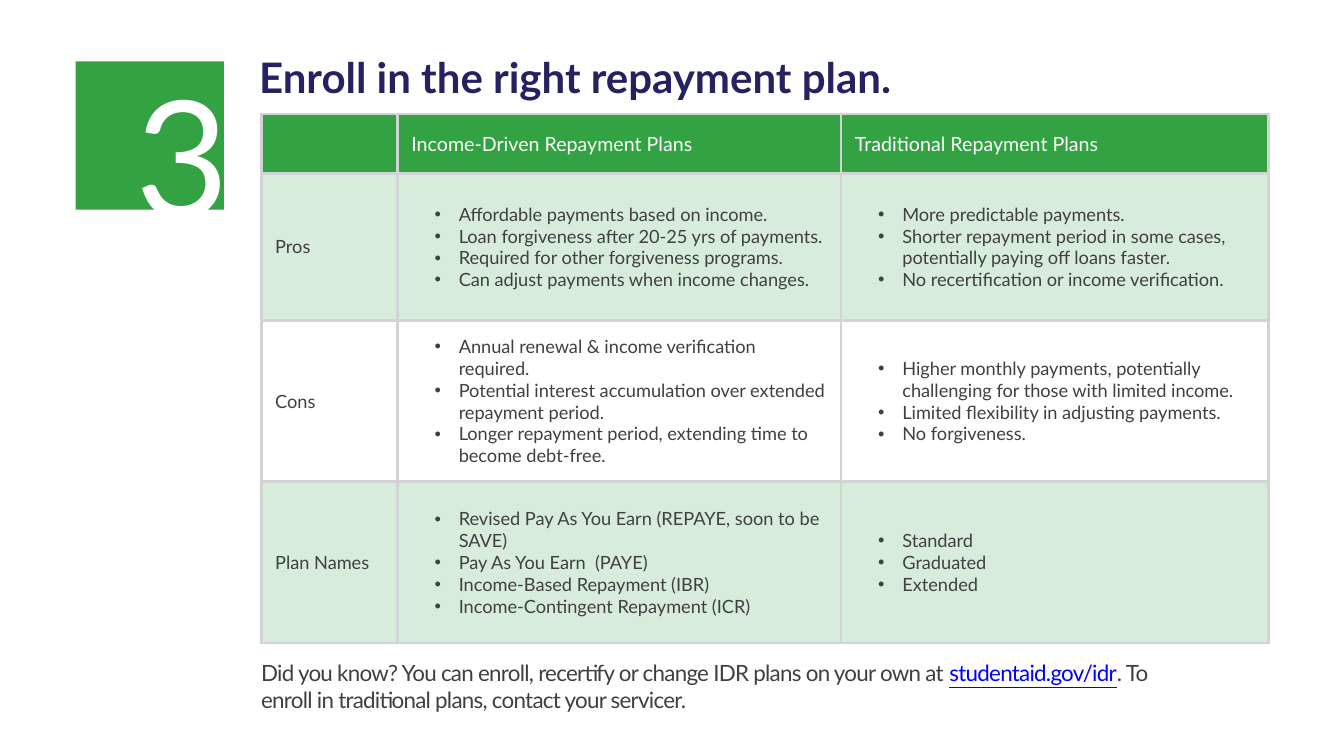
from typing import NamedTuple

from lxml import etree
from pptx import Presentation
from pptx import util as u
from pptx.dml.color import RGBColor
from pptx.enum import shapes, text
from pptx.oxml.ns import qn

PX = 9144  # EMU per px, 100 px to the inch
FONT = "Lato"
HUES = {"green": "32A242", "pale": "D8ECDB", "grid": "D1D3D4", "navy": "262261",
        "body": "404040", "link": "0000FF", "white": "FFFFFF"}


class Box(NamedTuple):
    left: int
    top: int
    width: int
    height: int


class Span(NamedTuple):
    words: str
    hue: str
    line: bool = False


class Label(NamedTuple):
    box: Box
    spans: list[Span]
    size: float
    lead: float
    bold: bool = False
    track: int = 0


class Row(NamedTuple):
    height: int
    fill: str | None
    hue: str
    size: int
    head: str
    lists: list[list[str]]
    dots: bool = True


TILE = Box(75, 61, 147, 147)
GRID = Box(259, 113, 999, 525)
COLS = [135, 440, 424]
PAD = 14

ROWS = [
    Row(59, "green", "white", 14, "",
        [["Income-Driven Repayment Plans"], ["Traditional Repayment Plans"]], dots=False),
    Row(146, "pale", "body", 13, "Pros", [
        ["Affordable payments based on income.",
         "Loan forgiveness after 20-25 yrs of payments.",
         "Required for other forgiveness programs.",
         "Can adjust payments when income changes."],
        ["More predictable payments.",
         "Shorter repayment period in some cases, potentially paying off loans faster.",
         "No recertification or income verification."]]),
    Row(160, None, "body", 13, "Cons", [
        ["Annual renewal & income verification required.",
         "Potential interest accumulation over extended repayment period.",
         "Longer repayment period, extending time to become debt-free."],
        ["Higher monthly payments, potentially challenging for those with limited income.",
         "Limited flexibility in adjusting payments.",
         "No forgiveness."]]),
    Row(160, "pale", "body", 13, "Plan Names", [
        ["Revised Pay As You Earn (REPAYE, soon to be SAVE)",
         "Pay As You Earn  (PAYE)",
         "Income-Based Repayment (IBR)",
         "Income-Contingent Repayment (ICR)"],
        ["Standard", "Graduated", "Extended"]]),
]

LABELS = [
    Label(Box(257, 51, 962, 50), [Span("Enroll in the right repayment plan.", "navy")],
          30, 36, bold=True),
    Label(Box(134, 23, 111, 207), [Span("3", "white")], 115.6, 161.8),
    Label(Box(259, 654, 920, 107), [
        Span("Did you know? You can enroll, recertify or change IDR plans on your own at ", "body"),
        Span("studentaid.gov/idr", "link", line=True),
        Span(". To enroll in traditional plans, contact your servicer.", "body"),
    ], 16, 19.2, track=-50),
]


def paint(name: str) -> RGBColor:
    return RGBColor.from_string(HUES[name])


def scale(box: Box) -> list[int]:
    return [n * PX for n in box]


def add_tile(slide, box: Box) -> None:
    tile = slide.shapes.add_shape(shapes.MSO_SHAPE.RECTANGLE, *scale(box))
    tile.shadow.inherit = False
    tile.fill.solid()
    tile.fill.fore_color.rgb = paint("green")
    tile.line.fill.background()


def add_label(slide, label: Label) -> None:
    frame = slide.shapes.add_textbox(*scale(label.box)).text_frame
    frame.word_wrap = True
    frame.margin_left = frame.margin_top = frame.margin_right = frame.margin_bottom = 0
    para = frame.paragraphs[0]
    para.line_spacing = u.Pt(label.lead)
    para.font.name, para.font.size, para.font.bold = FONT, u.Pt(label.size), label.bold
    for span in label.spans:
        run = para.add_run()
        run.text = span.words
        run.font.color.rgb = paint(span.hue)
        run.font.underline = span.line
        if label.track:
            run._r.get_or_add_rPr().set("spc", str(label.track))


def add_dot(para) -> None:
    para.level = 1
    props = para._p.get_or_add_pPr()
    props.set("marL", str(47 * PX))
    props.set("indent", str(-24 * PX))
    mark = etree.Element(qn("a:buChar"), char="•")
    face = etree.Element(qn("a:buFont"), typeface="Arial")
    props.insert(0, mark)
    props.insert(0, face)


def add_edges(cell) -> None:
    props = cell._tc.get_or_add_tcPr()
    for spot, side in enumerate(("lnL", "lnR", "lnT", "lnB")):
        edge = etree.Element(qn(f"a:{side}"), w=str(u.Pt(2.25)))
        fill = etree.SubElement(edge, qn("a:solidFill"))
        etree.SubElement(fill, qn("a:srgbClr"), val=HUES["grid"])
        props.insert(spot, edge)


def fill_cell(cell, row: Row, lines: list[str], dots: bool) -> None:
    cell.margin_left = cell.margin_top = cell.margin_right = cell.margin_bottom = PAD * PX
    cell.vertical_anchor = text.MSO_ANCHOR.MIDDLE
    if row.fill:
        cell.fill.solid()
        cell.fill.fore_color.rgb = paint(row.fill)
    else:
        cell.fill.background()
    add_edges(cell)
    cell.text_frame.text = "\n".join(lines)
    for para in cell.text_frame.paragraphs:
        para.font.name, para.font.size = FONT, u.Pt(row.size)
        para.font.bold = False
        para.font.color.rgb = paint(row.hue)
        if dots:
            add_dot(para)


def add_grid(slide, box: Box, rows: list[Row]) -> None:
    table = slide.shapes.add_table(len(rows), len(COLS), *scale(box)).table
    table.first_row = table.horz_banding = False
    for col, width in zip(table.columns, COLS):
        col.width = width * PX
    for line, row in zip(table.rows, rows):
        line.height = row.height * PX
        for spot, (cell, lines) in enumerate(zip(line.cells, [[row.head], *row.lists])):
            fill_cell(cell, row, lines, row.dots and spot > 0)


def main() -> None:
    deck = Presentation()
    deck.slide_width, deck.slide_height = 1333 * PX, 750 * PX
    slide = deck.slides.add_slide(deck.slide_layouts[6])
    # Number tile and comparison table
    add_tile(slide, TILE)
    add_grid(slide, GRID, ROWS)
    # Title, step number and footnote
    for label in LABELS:
        add_label(slide, label)
    deck.save("out.pptx")


if __name__ == "__main__":
    main()
